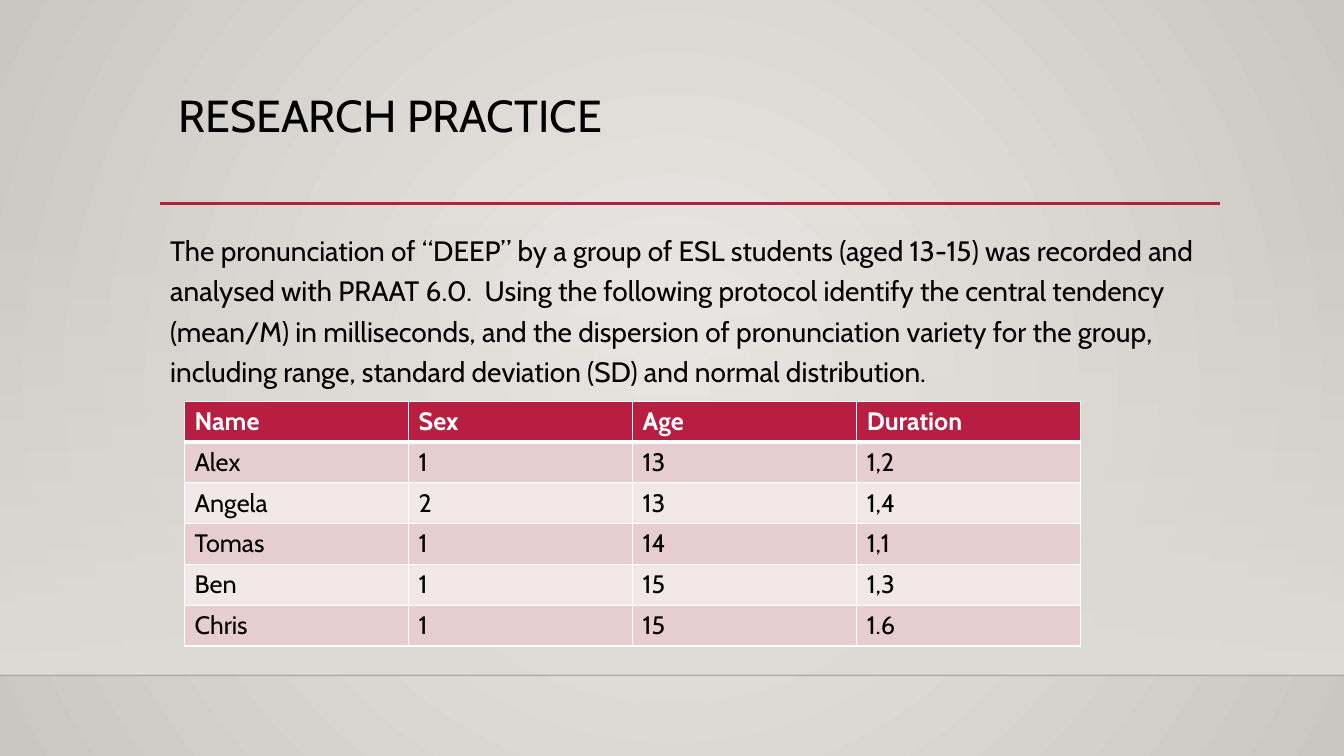
from lxml.etree import SubElement
from pptx import Presentation
from pptx.dml.color import RGBColor
from pptx.enum.shapes import MSO_CONNECTOR, MSO_SHAPE
from pptx.oxml import parse_xml
from pptx.oxml.ns import nsdecls, qn
from pptx.util import Inches, Pt

FONT = "Cabin"
BLACK = RGBColor(0x00, 0x00, 0x00)
WHITE = RGBColor(0xFF, 0xFF, 0xFF)
CRIMSON = RGBColor(0xB7, 0x1E, 0x42)
ROSE = RGBColor(0xE6, 0xCD, 0xCF)
PALE_ROSE = RGBColor(0xF3, 0xE8, 0xE9)
CENTRE_GREY = RGBColor(0xEC, 0xEA, 0xE7)
EDGE_GREY = RGBColor(0xCA, 0xC7, 0xC1)
FLOOR_GREY = RGBColor(0xDF, 0xDB, 0xD5)
RULE_BLACK = RGBColor(0x00, 0x00, 0x01)

TITLE = "RESEARCH PRACTICE"
TASK = (
    "The pronunciation of “DEEP” by a group of ESL students (aged 13-15) was "
    "recorded and analysed with PRAAT 6.0.  Using the following protocol identify "
    "the central tendency (mean/M) in milliseconds, and the dispersion of "
    "pronunciation variety for the group, including range, standard deviation (SD) "
    "and normal distribution."
)
STUDENTS = [
    ("Name", "Sex", "Age", "Duration"),
    ("Alex", "1", "13", "1,2"),
    ("Angela", "2", "13", "1,4"),
    ("Tomas", "1", "14", "1,1"),
    ("Ben", "1", "15", "1,3"),
    ("Chris", "1", "15", "1.6"),
]


def set_gradient(fill, first, last):
    fill.gradient()
    for stop, color in zip(fill.gradient_stops, (first, last)):
        stop.color.rgb = color


def set_alpha(element, percent):
    color = next(element.iter(qn("a:srgbClr")))
    SubElement(color, qn("a:alpha")).set("val", str(percent * 1000))


def add_rule(s, left, top, width, color, weight):
    line = s.shapes.add_connector(
        MSO_CONNECTOR.STRAIGHT, Inches(left), Inches(top), Inches(left + width), Inches(top)
    )
    line.line.color.rgb = color
    line.line.width = Pt(weight)
    SubElement(line._element.spPr, qn("a:effectLst"))
    return line


def add_backdrop(s, left, top, width, height):
    set_gradient(s.background.fill, CENTRE_GREY, EDGE_GREY)
    grad = next(s._element.iter(qn("a:gradFill")))
    grad.remove(grad.find(qn("a:lin")))
    grad.append(parse_xml(
        f'<a:path {nsdecls("a")} path="circle">'
        '<a:fillToRect l="50000" t="50000" r="50000" b="50000"/></a:path>'
    ))
    sp = s.shapes.add_shape(
        MSO_SHAPE.RECTANGLE, Inches(left), Inches(top), Inches(width), Inches(height)
    )
    sp.shadow.inherit = False
    sp.line.fill.background()
    set_gradient(sp.fill, FLOOR_GREY, FLOOR_GREY)
    sp.fill.gradient_angle = 270
    set_alpha(sp._element.spPr, 0)
    edge = add_rule(s, left, top + height, width, RULE_BLACK, 1)
    set_alpha(edge._element.spPr, 20)


def add_text(s, left, top, width, height, text, size, spacing, inset=0.1):
    sp = s.shapes.add_textbox(Inches(left), Inches(top), Inches(width), Inches(height))
    tf = sp.text_frame
    tf.word_wrap = True
    tf.margin_left = Inches(inset)
    tf.text = text
    p = tf.paragraphs[0]
    p.line_spacing = spacing
    format_run(p.runs[0], size, BLACK)


def format_run(r, size, color, bold=False):
    r.font.name = FONT
    r.font.size = Pt(size)
    r.font.bold = bold
    r.font.color.rgb = color


def set_borders(cell, top, bottom):
    tcPr = cell._tc.get_or_add_tcPr()
    weights = {"lnL": 1, "lnR": 1, "lnT": top, "lnB": bottom}
    for index, (side, weight) in enumerate(weights.items()):
        tcPr.insert(index, parse_xml(
            f'<a:{side} {nsdecls("a")} w="{Pt(weight)}"><a:solidFill>'
            f'<a:srgbClr val="{WHITE}"/></a:solidFill></a:{side}>'
        ))


def add_student_table(s, left, top, width, height):
    table = s.shapes.add_table(
        len(STUDENTS), len(STUDENTS[0]),
        Inches(left), Inches(top), Inches(width), Inches(height),
    ).table
    for row, values in enumerate(STUDENTS):
        header = row == 0
        fill = CRIMSON if header else (ROSE if row % 2 else PALE_ROSE)
        for col, value in enumerate(values):
            cell = table.cell(row, col)
            cell.fill.solid()
            cell.fill.fore_color.rgb = fill
            set_borders(cell, 3 if row == 1 else 1, 3 if header else 1)
            cell.text_frame.text = value
            r = cell.text_frame.paragraphs[0].runs[0]
            format_run(r, 18, WHITE if header else BLACK, header)


def main():
    prs = Presentation()
    prs.slide_width = Inches(13.33)
    prs.slide_height = Inches(7.5)
    s = prs.slides.add_slide(prs.slide_layouts[6])
    add_backdrop(s, 0, 2.21, 13.33, 4.49)
    add_rule(s, 1.59, 2.02, 10.51, CRIMSON, 2.5)
    add_text(s, 1.59, 0.88, 10.5, 1.15, TITLE, 32, 0.9, inset=0.18)
    add_text(s, 1.59, 2.2, 10.5, 3.77, TASK, 20, 1.2)
    add_student_table(s, 1.83, 3.98, 8.89, 2.43)
    prs.save("out.pptx")


if __name__ == "__main__":
    main()
